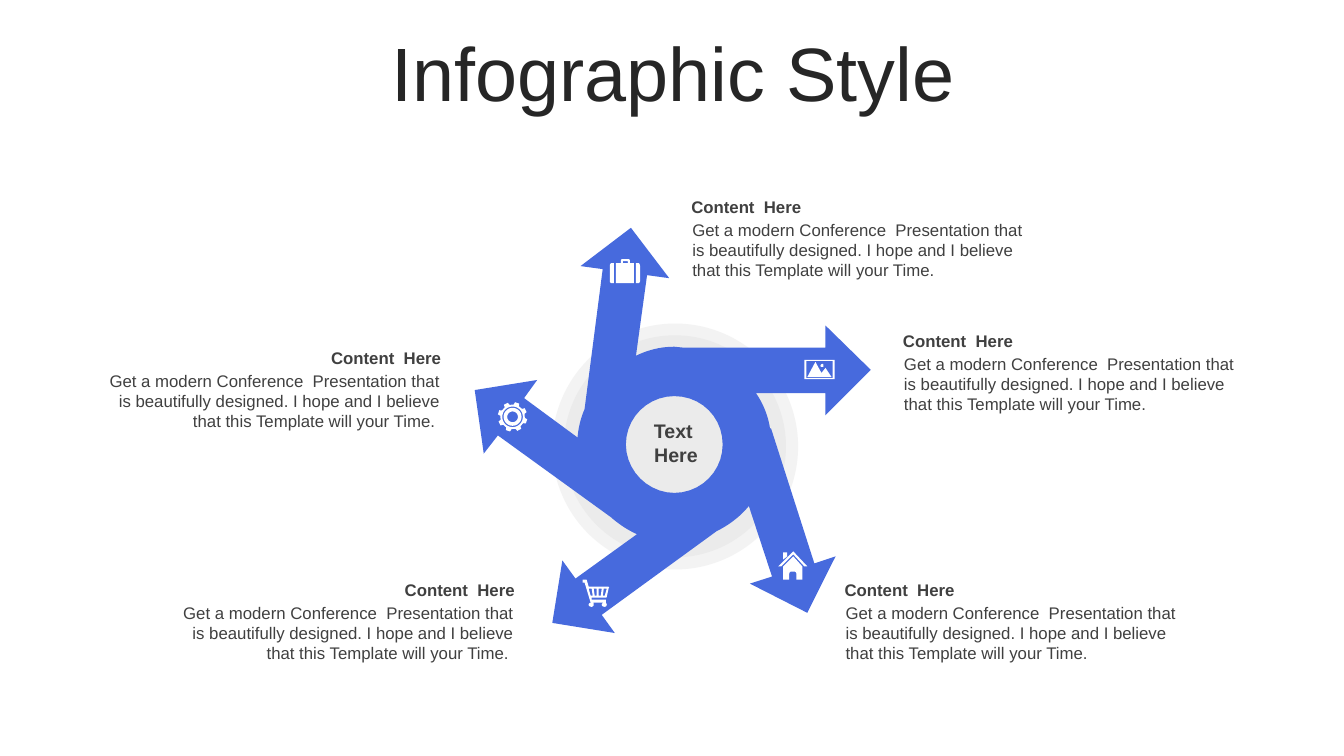
from dataclasses import dataclass
from math import cos, radians, sin

from lxml.etree import SubElement
from pptx import Presentation
from pptx.dml.color import RGBColor
from pptx.enum.shapes import MSO_SHAPE
from pptx.enum.text import MSO_ANCHOR, MSO_AUTO_SIZE, PP_ALIGN
from pptx.oxml.ns import qn
from pptx.util import Pt


@dataclass(frozen=True)
class Theme:
    font: str = "Arial"
    title_color: str = "262626"
    text_color: str = "404040"
    halo_color: str = "D9D9D9"
    wheel_color: str = "476ADD"
    icon_color: str = "FFFFFF"
    title_size: int = 54
    hub_size: int = 14
    body_size: int = 12
    halo_opacity: int = 30
    grid: float = 0.72


WHEEL = (
    "669,393 C 643,393 621,414 621,441 C 621,467 643,489 669,489 "
    "C 696,489 717,467 717,441 C 717,414 696,393 669,393 | "
    "626,226 664,276 642,273 631,353 C 643,347 656,344 669,344 "
    "679,345 819,345 819,323 864,367 819,412 819,390 750,390 "
    "C 757,400 762,412 764,425 765,425 808,559 829,552 801,608 744,579 "
    "766,572 743,502 C 734,513 723,521 711,527 597,610 610,628 548,618 "
    "558,556 571,574 632,530 C 623,526 614,520 606,513 494,432 480,450 "
    "471,387 533,377 520,395 573,434 C 574,424 576,415 580,406 "
    "598,267 576,264"
)
CART = (
    "599,584 598,591 600,591 602,584 | 594,584 594,591 596,591 597,584 | "
    "589,584 590,591 592,591 592,584 | 584,584 586,591 588,591 587,584 | "
    "582,575 584,582 603,582 C 604,582 605,583 604,583 602,592 "
    "C 602,593 601,593 601,593 587,593 587,595 601,595 601,598 "
    "C 601,598 602,599 602,600 C 602,601 601,602 600,602 "
    "C 598,602 597,601 597,600 C 597,599 598,598 599,598 588,598 "
    "C 589,598 589,599 589,600 C 589,601 588,602 587,602 "
    "C 585,602 584,601 584,600 C 584,599 585,598 586,598 "
    "580,578 578,578 578,575"
)
HOUSE = (
    "787,552 796,562 796,575 790,575 790,569 C 790,568 789,567 788,567 "
    "785,567 C 784,567 783,568 783,569 783,575 777,575 777,562 | "
    "777,548 781,548 781,552 777,555 | "
    "787,547 801,562 798,562 787,550 775,562 772,562"
)
PHOTO = (
    "816,361 C 817,361 817,362 817,363 C 817,364 817,364 816,364 "
    "C 815,364 814,364 814,363 C 814,362 815,361 816,361 | "
    "809,359 815,370 819,365 825,374 801,374 | "
    "800,358 800,375 826,375 826,358 | 798,357 828,357 828,376 798,376"
)
SUITCASE = (
    "631,261 633,261 C 634,261 635,262 635,264 635,279 "
    "C 635,280 634,281 633,281 631,281 | "
    "607,261 609,261 609,281 607,281 C 606,281 605,280 605,279 605,264 "
    "C 605,262 606,261 607,261 | "
    "619,259 C 618,259 618,259 618,260 618,261 623,261 623,260 "
    "C 623,259 622,259 622,259 | "
    "617,257 623,257 C 624,257 625,258 625,258 625,261 629,261 629,281 "
    "611,281 611,261 616,261 616,258 C 616,258 617,257 617,257"
)
BODY = ("Get a modern Conference  Presentation that is beautifully designed. "
        "I hope and I believe that this Template will your Time.")


def point(token):
    x, y = token.split(",")
    return float(x), float(y)


def bezier(corners, steps=10):
    for step in range(1, steps + 1):
        t = step / steps
        weights = ((1 - t) ** 3, 3 * t * (1 - t) ** 2, 3 * t * t * (1 - t), t ** 3)
        yield tuple(sum(w * corner[axis] for w, corner in zip(weights, corners))
                    for axis in (0, 1))


def trace(contour):
    tokens = iter(contour.split())
    points = []
    for token in tokens:
        if token == "C":
            controls = [point(next(tokens)) for _ in range(3)]
            points.extend(bezier([points[-1], *controls]))
        else:
            points.append(point(token))
    return points


def polar(center, radius, angle):
    return (center[0] + radius * cos(radians(angle)),
            center[1] + radius * sin(radians(angle)))


def gear(center):
    rings = [[polar(center, radius, angle) for angle in range(0, 360, 10)]
             for radius in (5.3, 8.9, 10.2)]
    tooth = ((12.2, -13), (14.7, -8.5), (14.7, 8.5), (12.2, 13))
    rim = [polar(center, radius, middle + offset)
           for middle in range(-72, 288, 45) for radius, offset in tooth]
    return rings + [rim]


class SlideBuilder:
    def __init__(self, slide, theme):
        self.slide = slide
        self.theme = theme

    def paint(self, shape, color):
        shape.shadow.inherit = False
        shape.fill.solid()
        shape.fill.fore_color.rgb = RGBColor.from_string(color)
        shape.line.fill.background()

    def halo(self, left, top, size):
        shape = self.slide.shapes.add_shape(
            MSO_SHAPE.OVAL, Pt(left), Pt(top), Pt(size), Pt(size))
        self.paint(shape, self.theme.halo_color)
        color = next(shape.element.spPr.iter(qn("a:srgbClr")))
        SubElement(color, qn("a:alpha")).set("val", str(self.theme.halo_opacity * 1000))

    def outline(self, contours, color):
        scaled = [[(Pt(x * self.theme.grid), Pt(y * self.theme.grid)) for x, y in contour]
                  for contour in contours]
        builder = self.slide.shapes.build_freeform(*scaled[0][0], scale=1.0)
        for index, contour in enumerate(scaled):
            if index:
                builder.move_to(*contour[0])
            builder.add_line_segments(contour[1:], close=True)
        self.paint(builder.convert_to_shape(), color)

    def drawing(self, path_text, color):
        self.outline([trace(contour) for contour in path_text.split("|")], color)

    def text(self, box, lines, size, color, align, bold=False,
             anchor=MSO_ANCHOR.TOP, grow=True):
        shape = self.slide.shapes.add_textbox(*map(Pt, box))
        frame = shape.text_frame
        frame.word_wrap = True
        frame.vertical_anchor = anchor
        frame.auto_size = MSO_AUTO_SIZE.SHAPE_TO_FIT_TEXT if grow else MSO_AUTO_SIZE.NONE
        for index, line in enumerate(lines):
            paragraph = frame.add_paragraph() if index else frame.paragraphs[0]
            paragraph.alignment = align
            run = paragraph.add_run()
            run.text = line
            run.font.name = self.theme.font
            run.font.size = Pt(size)
            run.font.bold = bold
            run.font.color.rgb = RGBColor.from_string(color)
        return frame

    def title(self, box, wording):
        frame = self.text(box, [wording], self.theme.title_size, self.theme.title_color,
                          PP_ALIGN.CENTER, anchor=MSO_ANCHOR.MIDDLE, grow=False)
        frame.paragraphs[0].line_spacing = 0.9
        frame.paragraphs[0].space_before = Pt(10)

    def callout(self, left, top, align):
        size, color = self.theme.body_size, self.theme.text_color
        ending = " " if align == PP_ALIGN.RIGHT else ""
        self.text((left, top, 261, 21.6), ["Content  Here"], size, color, align,
                  bold=True, anchor=MSO_ANCHOR.MIDDLE)
        self.text((left + 0.72, top + 16.56, 259.5, 51), [BODY + ending],
                  size, color, align)


def main():
    presentation = Presentation()
    presentation.slide_width = Pt(960)
    presentation.slide_height = Pt(540)
    theme = Theme()
    slide = presentation.slides.add_slide(presentation.slide_layouts[6])
    builder = SlideBuilder(slide, theme)

    builder.title((25.2, 26.64, 911.5, 56.88), "Infographic Style")
    builder.halo(394.4, 231.1, 175.7)
    builder.halo(402.8, 239.5, 158.6)
    builder.drawing(WHEEL, theme.wheel_color)
    builder.text((447.1, 295.9, 67.7, 41), ["Text", " Here"], theme.hub_size,
                 theme.text_color, PP_ALIGN.CENTER, bold=True)
    for left, top, align in (
        (113.8, 410.4, PP_ALIGN.RIGHT),
        (61.2, 244.8, PP_ALIGN.RIGHT),
        (486.7, 136.8, PP_ALIGN.LEFT),
        (637.9, 232.6, PP_ALIGN.LEFT),
        (596.2, 410.4, PP_ALIGN.LEFT),
    ):
        builder.callout(left, top, align)
    for icon in (CART, HOUSE, PHOTO, SUITCASE):
        builder.drawing(icon, theme.icon_color)
    builder.outline(gear((508.5, 413.5)), theme.icon_color)

    presentation.save("out.pptx")


if __name__ == "__main__":
    main()
